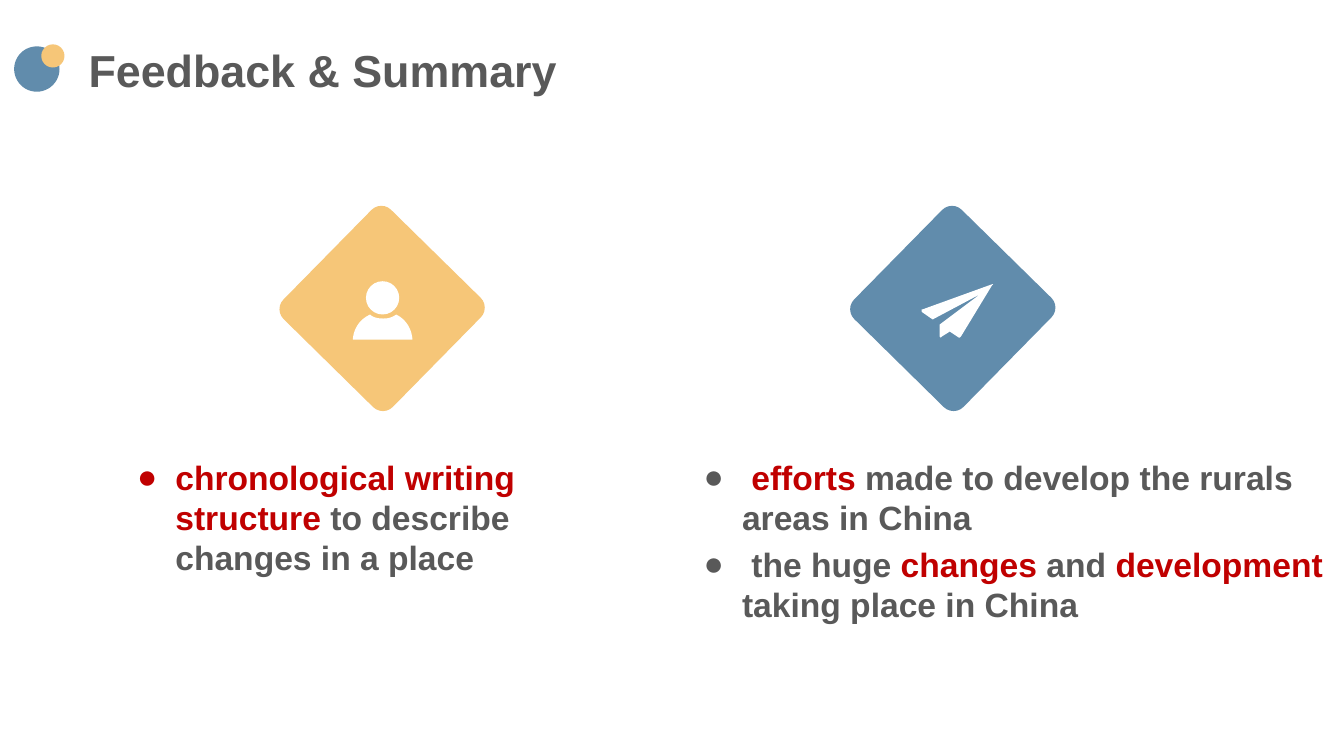
from lxml import etree
from pptx import Presentation
from pptx import util as u
from pptx.dml.color import RGBColor
from pptx.enum import shapes
from pptx.oxml.ns import qn

COLORS = {"blue": "618CAC", "gold": "F6C678", "gray": "595959",
          "red": "C00000", "white": "FFFFFF"}


def curve(start, control_a, control_b, end, steps=10):
    points = []
    for step in range(steps + 1):
        t = step / steps
        weights = ((1 - t) ** 3, 3 * t * (1 - t) ** 2, 3 * t ** 2 * (1 - t), t ** 3)
        corners = (start, control_a, control_b, end)
        points.append(tuple(sum(w * c[axis] for w, c in zip(weights, corners))
                            for axis in (0, 1)))
    return points


class SlideBuilder:
    font = "Arial"

    def __init__(self, slide):
        self.slide = slide

    def color(self, name):
        return RGBColor.from_string(COLORS[name])

    def paint(self, shape, fill):
        shape.shadow.inherit = False
        shape.fill.solid()
        shape.fill.fore_color.rgb = self.color(fill)
        shape.line.fill.background()
        return shape

    def circle(self, left, top, size, fill):
        box = [u.Inches(v) for v in (left, top, size, size)]
        return self.paint(self.slide.shapes.add_shape(shapes.MSO_SHAPE.OVAL, *box), fill)

    def diamond(self, left, fill):
        box = [u.Inches(v) for v in (left, 2.3, 1.52, 1.52)]
        tile = self.slide.shapes.add_shape(shapes.MSO_SHAPE.ROUNDED_RECTANGLE, *box)
        tile.adjustments[0] = 0.09
        tile.rotation = 314.5
        return self.paint(tile, fill)

    def outline(self, points, fill):
        corners = [(u.Inches(x), u.Inches(y)) for x, y in points]
        builder = self.slide.shapes.build_freeform(*corners[0])
        builder.add_line_segments(corners[1:], close=True)
        return self.paint(builder.convert_to_shape(), fill)

    def text(self, left, top, width, height, paragraphs, size, bullet=None):
        box = [u.Inches(v) for v in (left, top, width, height)]
        frame = self.slide.shapes.add_textbox(*box).text_frame
        frame.word_wrap = True
        if bullet:
            frame.margin_left = frame.margin_right = 0
            frame.margin_top = frame.margin_bottom = 0
        for index, runs in enumerate(paragraphs):
            paragraph = frame.paragraphs[0] if index == 0 else frame.add_paragraph()
            if index:
                paragraph.space_before = u.Pt(4.8)
            if bullet:
                properties = paragraph._p.get_or_add_pPr()
                properties.set("marL", str(u.Inches(0.38)))
                properties.set("indent", str(-u.Inches(0.38)))
                etree.SubElement(properties, qn("a:buFont"), typeface=self.font)
                etree.SubElement(properties, qn("a:buChar"), char=bullet)
            paragraph.font.name = self.font
            paragraph.font.size = u.Pt(size)
            paragraph.font.bold = True
            for words, color in runs:
                run = paragraph.add_run()
                run.text = words
                run.font.color.rgb = self.color(color)


def main():
    deck = Presentation()
    deck.slide_width, deck.slide_height = u.Inches(13.33), u.Inches(7.5)
    page = SlideBuilder(deck.slides.add_slide(deck.slide_layouts[6]))

    page.text(0.78, 0.37, 5.3, 0.64, [[("Feedback & Summary", "gray")]], 32)
    page.circle(0.14, 0.46, 0.45, "blue")
    page.circle(0.41, 0.44, 0.23, "gold")

    page.diamond(3.03, "gold")
    page.circle(3.63, 2.79, 0.33, "white")
    shoulders = (
        curve((3.5, 3.37), (3.5, 3.33), (3.52, 3.19), (3.67, 3.12))
        + curve((3.67, 3.12), (3.7, 3.15), (3.75, 3.16), (3.8, 3.16))
        + curve((3.8, 3.16), (3.85, 3.16), (3.89, 3.15), (3.93, 3.12))
        + curve((3.93, 3.12), (4.07, 3.19), (4.09, 3.33), (4.09, 3.37)))
    page.outline(shoulders, "white")

    page.diamond(8.69, "blue")
    paper_plane = [
        (9.84, 2.82), (9.85, 2.82), (9.84, 2.83), (9.53, 3.34), (9.52, 3.35),
        (9.51, 3.35), (9.42, 3.29), (9.34, 3.34), (9.33, 3.35), (9.32, 3.34),
        (9.32, 3.22), (9.72, 2.92), (9.25, 3.17), (9.15, 3.1), (9.14, 3.09),
        (9.14, 3.07), (9.15, 3.07)]
    page.outline(paper_plane, "white")

    page.text(1.36, 4.53, 4.6, 1.21, [
        [("chronological writing structure", "red"),
         (" to describe changes in a place", "gray")],
    ], 24, "●")
    page.text(6.98, 4.53, 6.23, 1.7, [
        [(" ", "gray"), ("efforts", "red"),
         (" made to develop the rurals areas in China", "gray")],
        [(" the huge ", "gray"), ("changes", "red"), (" and ", "gray"),
         ("development", "red"), (" taking place in China", "gray")],
    ], 24, "●")

    deck.save("out.pptx")


if __name__ == "__main__":
    main()
